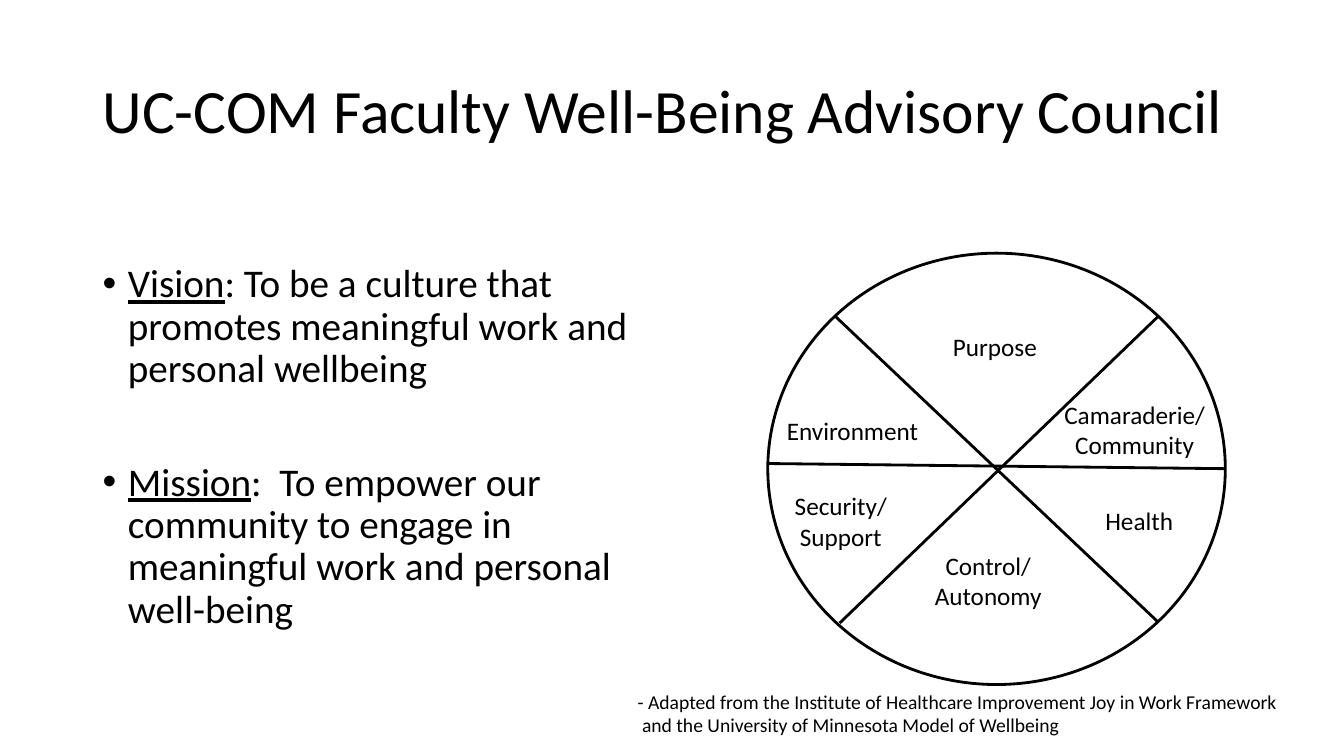
"""Build the faculty well-being slide: vision, mission and a six-part wheel."""
import lxml.etree
import pptx
import pptx.dml.color
import pptx.enum.shapes
import pptx.enum.text
import pptx.oxml.ns
import pptx.util
from pptx.util import Cm, Pt

BLACK = pptx.dml.color.RGBColor(0x00, 0x00, 0x00)
WHITE = pptx.dml.color.RGBColor(0xFF, 0xFF, 0xFF)
FONT = "Calibri"
LEFT = pptx.enum.text.PP_ALIGN.LEFT
CENTER = pptx.enum.text.PP_ALIGN.CENTER

TITLE = "UC-COM Faculty Well-Being Advisory Council"
STATEMENTS = [
    ("Vision", ": To be a culture that promotes meaningful work and personal wellbeing"),
    ("Mission", ":  To empower our community to engage in meaningful work and personal well-being"),
]
CREDIT = [
    "- Adapted from the Institute of Healthcare Improvement Joy in Work Framework",
    "and the University of Minnesota Model of Wellbeing",
]
WHEEL = (19.35, 6.38, 11.53, 10.87)
SPOKES = [
    (19.35, 11.68, 30.88, 11.81),
    (21.16, 15.7, 29.18, 7.98),
    (29.18, 15.67, 21.06, 7.98),
]
SECTORS = [
    (["Environment"], 19.58, 10.34, 3.81),
    (["Purpose"], 23.6, 8.23, 2.95),
    (["Camaraderie/", "Community"], 26.31, 9.93, 4.57),
    (["Security/", "Support"], 19.63, 12.24, 3.12),
    (["Health"], 27.48, 12.6, 2.46),
    (["Control/", "Autonomy"], 23.14, 13.74, 3.53),
]


def cm(lengths):
    return [Cm(length) for length in lengths]


def write(paragraph, text, *, size, underline=False, align=LEFT, spacing=None):
    paragraph.alignment = align
    if spacing:
        paragraph.line_spacing = spacing
    run = paragraph.add_run()
    run.text = text
    run.font.name = FONT
    run.font.size = Pt(size)
    run.font.color.rgb = BLACK
    run.font.underline = underline


def paragraph_at(frame, index):
    return frame.paragraphs[0] if index == 0 else frame.add_paragraph()


def set_indent(paragraph, left, first):
    properties = paragraph._p.get_or_add_pPr()
    properties.set("marL", str(Cm(left)))
    properties.set("indent", str(Cm(first)))
    return properties


def place(placeholder, box):
    placeholder.left, placeholder.top, placeholder.width, placeholder.height = cm(box)
    placeholder.text_frame.auto_size = pptx.enum.text.MSO_AUTO_SIZE.NONE
    return placeholder.text_frame


def add_lines(shapes, lines, box, **style):
    frame = shapes.add_textbox(*cm(box)).text_frame
    frame.word_wrap = False
    for index, line in enumerate(lines):
        write(paragraph_at(frame, index), line, **style)
    return frame


def add_statements(body):
    frame = place(body, (2.33, 5.08, 14.4, 12.09))
    frame.margin_top = Cm(1.57)
    for index, (term, statement) in enumerate(STATEMENTS):
        paragraph = paragraph_at(frame, index)
        properties = set_indent(paragraph, 0.64, -0.64)
        for tag, key, value in (("a:buFont", "typeface", "Arial"), ("a:buChar", "char", "•")):
            lxml.etree.SubElement(properties, pptx.oxml.ns.qn(tag)).set(key, value)
        write(paragraph, term, size=28, underline=True, spacing=0.9)
        write(paragraph, statement, size=28, spacing=0.9)
        paragraph.space_before = Pt(51 if index else 0)


def add_wheel(shapes):
    rim = shapes.add_shape(pptx.enum.shapes.MSO_SHAPE.OVAL, *cm(WHEEL))
    rim.shadow.inherit = False
    rim.fill.solid()
    rim.fill.fore_color.rgb = WHITE
    rim.line.color.rgb = BLACK
    rim.line.width = Pt(2)
    for ends in SPOKES:
        spoke = shapes.add_connector(pptx.enum.shapes.MSO_CONNECTOR.STRAIGHT, *cm(ends))
        spoke.line.color.rgb = BLACK
        spoke.line.width = Pt(2)
        lxml.etree.SubElement(spoke._element.spPr, pptx.oxml.ns.qn("a:effectLst"))
    for lines, left, top, width in SECTORS:
        height = 0.25 + 0.84 * len(lines)
        add_lines(shapes, lines, (left, top, width, height), size=18, align=CENTER)


def main():
    deck = pptx.Presentation()
    deck.slide_width, deck.slide_height = cm((33.87, 19.05))
    slide = deck.slides.add_slide(deck.slide_layouts[1])
    heading = place(slide.shapes.title, (2.33, 1.02, 29.21, 3.68))
    heading.vertical_anchor = pptx.enum.text.MSO_ANCHOR.MIDDLE
    write(heading.paragraphs[0], TITLE, size=44, spacing=0.9)
    add_statements(slide.placeholders[1])
    credit = add_lines(slide.shapes, CREDIT, (15.82, 17.25, 16.66, 1.45), size=14)
    set_indent(credit.paragraphs[1], 0.11, 0)
    add_wheel(slide.shapes.add_group_shape().shapes)
    deck.save("out.pptx")


if __name__ == "__main__":
    main()
